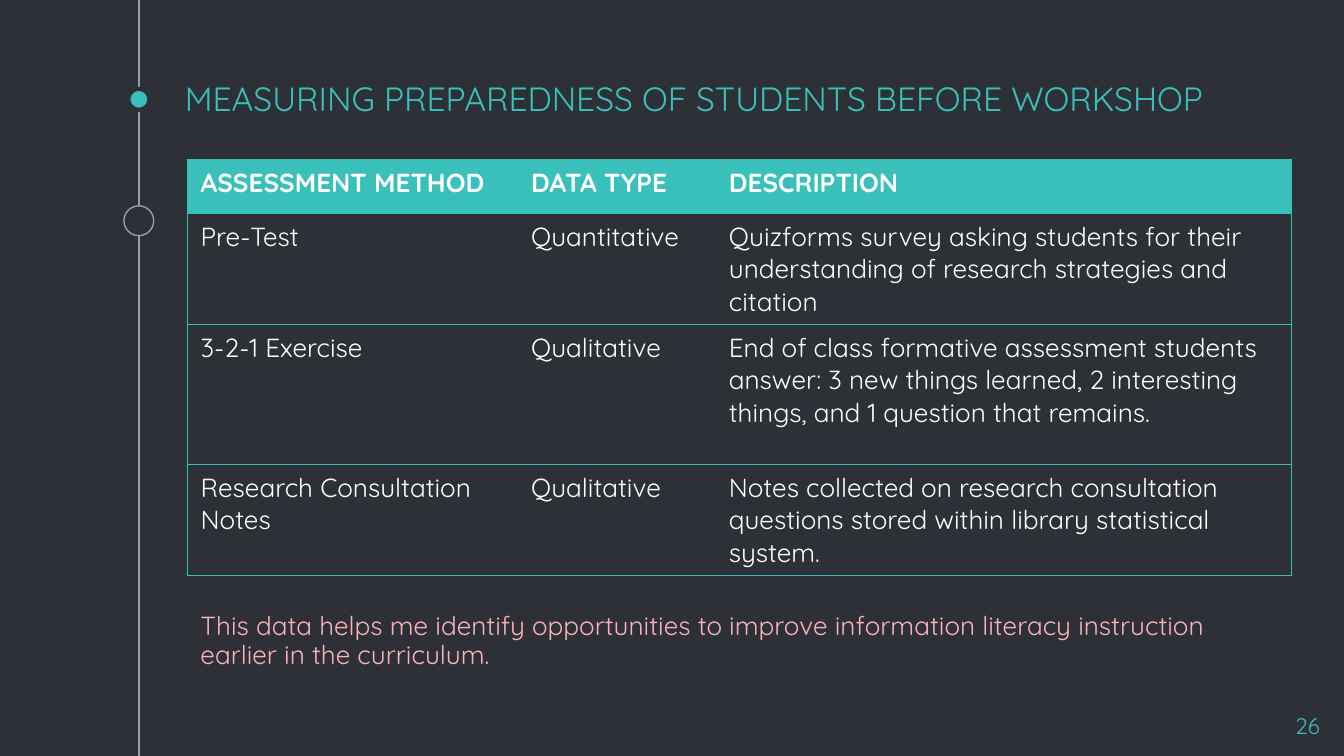
from lxml import etree
from pptx import Presentation
from pptx.dml.color import RGBColor
from pptx.enum import shapes, text
from pptx.oxml import ns
from pptx.util import Pt

BACKGROUND = RGBColor(0x2E, 0x30, 0x37)
TEAL = RGBColor(0x39, 0xC0, 0xBA)
BORDER = RGBColor(0x34, 0xBF, 0xB9)
GREY = RGBColor(0x99, 0x9F, 0xA9)
PINK = RGBColor(0xFA, 0xB2, 0xB9)
WHITE = RGBColor(0xFF, 0xFF, 0xFF)
NO_STYLE = "{2D5ABB26-0587-4C30-8999-92F81FD0307C}"

ROWS = [
    ("ASSESSMENT METHOD", "DATA TYPE", "DESCRIPTION"),
    ("Pre-Test", "Quantitative",
     "Quizforms survey asking students for their understanding of "
     "research strategies and citation"),
    ("3-2-1 Exercise", "Qualitative",
     "End of class formative assessment students answer: 3 new things "
     "learned, 2 interesting things, and 1 question that remains."),
    ("Research Consultation Notes", "Qualitative",
     "Notes collected on research consultation questions stored within "
     "library statistical system."),
]
COLUMN_WIDTHS = (177, 106, 308.5)
ROW_HEIGHTS = (28.8, 59.5, 75, 59.5)


class SlideBuilder:
    font_name = "Quicksand"

    def __init__(self, slide):
        self.slide = slide
        slide.background.fill.solid()
        slide.background.fill.fore_color.rgb = BACKGROUND

    def style_text(self, frame, content, size, color, bold=False,
                   align=text.PP_ALIGN.LEFT):
        frame.word_wrap = True
        frame.text = content
        paragraph = frame.paragraphs[0]
        paragraph.alignment = align
        font = paragraph.font
        font.name, font.size, font.bold = self.font_name, Pt(size), bold
        font.color.rgb = color
        return paragraph

    def set_insets(self, frame, inset):
        frame.margin_left = frame.margin_right = Pt(inset)
        frame.margin_top = frame.margin_bottom = Pt(inset)

    def title(self, content, left, top, width, height):
        title = self.slide.shapes.title
        title.left, title.top = Pt(left), Pt(top)
        title.width, title.height = Pt(width), Pt(height)
        frame = title.text_frame
        frame.auto_size = text.MSO_AUTO_SIZE.NONE
        frame.vertical_anchor = text.MSO_ANCHOR.BOTTOM
        self.set_insets(frame, 7.2)
        self.style_text(frame, content, 18, TEAL)

    def text_box(self, content, left, top, width, height, size, color, **style):
        box = self.slide.shapes.add_textbox(
            Pt(left), Pt(top), Pt(width), Pt(height))
        self.style_text(box.text_frame, content, size, color, **style)
        return box.text_frame

    def line(self, start_x, start_y, end_x, end_y):
        line = self.slide.shapes.add_connector(
            shapes.MSO_CONNECTOR.STRAIGHT,
            Pt(start_x), Pt(start_y), Pt(end_x), Pt(end_y))
        line.line.color.rgb = GREY
        line.line.width = Pt(0.75)
        etree.SubElement(line._element.spPr, ns.qn("a:effectLst"))

    def circle(self, center_x, center_y, diameter, fill, outline, weight):
        circle = self.slide.shapes.add_shape(
            shapes.MSO_SHAPE.OVAL, Pt(center_x - diameter / 2),
            Pt(center_y - diameter / 2), Pt(diameter), Pt(diameter))
        circle.shadow.inherit = False
        circle.fill.solid()
        circle.fill.fore_color.rgb = fill
        circle.line.color.rgb = outline
        circle.line.width = Pt(weight)

    def cell_borders(self, cell, sides):
        properties = cell._tc.get_or_add_tcPr()
        for side in sides:
            border = etree.SubElement(
                properties, ns.qn(f"a:ln{side}"), w=str(Pt(0.75)))
            fill = etree.SubElement(border, ns.qn("a:solidFill"))
            etree.SubElement(fill, ns.qn("a:srgbClr"), val=str(BORDER))

    def table(self, rows, left, top, widths, heights):
        frame = self.slide.shapes.add_table(
            len(rows), len(widths), Pt(left), Pt(top),
            Pt(sum(widths)), Pt(sum(heights)))
        table = frame.table
        table.horz_banding = False
        table._tbl.tblPr.find(ns.qn("a:tableStyleId")).text = NO_STYLE
        for column, width in zip(table.columns, widths):
            column.width = Pt(width)
        for row, height in zip(table.rows, heights):
            row.height = Pt(height)
        last_column = len(widths) - 1
        for row_index, row in enumerate(rows):
            header = row_index == 0
            for column_index, content in enumerate(row):
                cell = table.cell(row_index, column_index)
                self.style_text(cell.text_frame, content, 14, WHITE, header)
                outer = {0: "L", last_column: "R"}.get(column_index, "")
                self.cell_borders(cell, outer + "TB")
                if header:
                    cell.fill.solid()
                    cell.fill.fore_color.rgb = TEAL
                else:
                    cell.fill.background()


def main():
    presentation = Presentation()
    presentation.slide_width, presentation.slide_height = Pt(720), Pt(405)
    slide = presentation.slides.add_slide(presentation.slide_layouts[5])
    builder = SlideBuilder(slide)

    timeline_x = 74.4
    builder.line(timeline_x, 0, timeline_x, 405)
    builder.circle(timeline_x, 53.2, 11.2, TEAL, BACKGROUND, 2.25)
    builder.circle(timeline_x, 118.3, 16, BACKGROUND, GREY, 0.75)

    builder.title("MEASURING PREPAREDNESS OF STUDENTS BEFORE WORKSHOP",
                  91.8, 43.2, 574.6, 27.4)
    number = builder.text_box("26", 671, 374.4, 43.2, 24.5, 12, TEAL,
                              align=text.PP_ALIGN.RIGHT)
    builder.set_insets(number, 7.2)
    builder.table(ROWS, 100.3, 85.4, COLUMN_WIDTHS, ROW_HEIGHTS)
    note = builder.text_box(
        "This data helps me identify opportunities to improve information "
        "literacy instruction earlier in the curriculum.",
        100.3, 324, 571, 41, 14, PINK)
    note.paragraphs[0].line_spacing = 0.95

    presentation.save("out.pptx")


if __name__ == "__main__":
    main()
